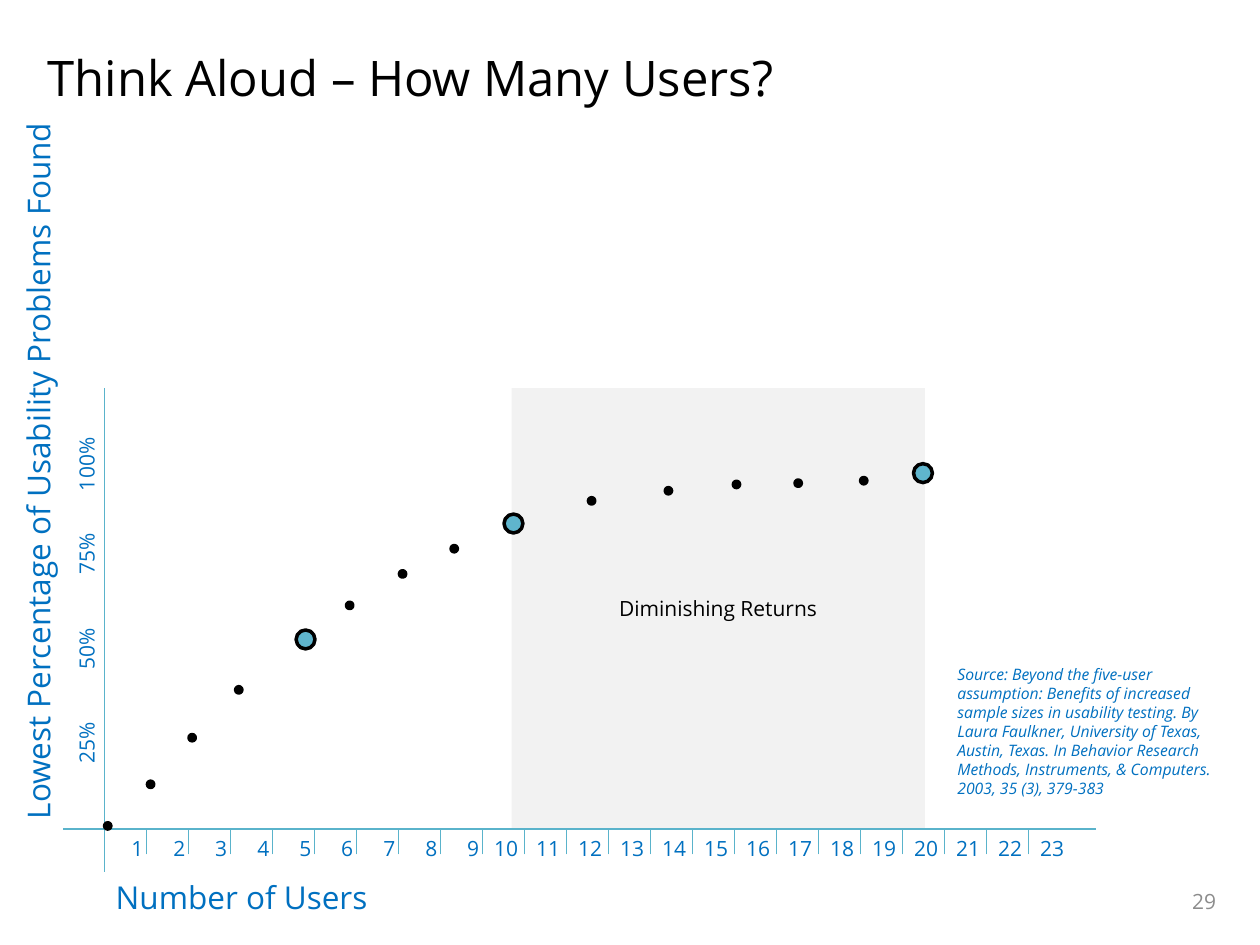
import pptx
import pptx.dml.color
import pptx.enum.shapes
import pptx.enum.text
import pptx.oxml.ns
import pptx.util
from lxml import etree

Inches, Pt = pptx.util.Inches, pptx.util.Pt
SHAPES = pptx.enum.shapes.MSO_SHAPE
ALIGN = pptx.enum.text.PP_ALIGN
ANCHOR = pptx.enum.text.MSO_ANCHOR

THEME = {
    "font": "Open Sans",
    "ink": "000000", "label": "0070C0", "axis": "5AB3CB", "marker": "5FB5CD",
    "region": "F2F2F2", "page_number": "8C8C8C",
    "title_size": 28, "axis_title_size": 18, "body_size": 12, "source_size": 9,
    "axis_width": 0.75, "marker_width": 2,
}

TITLE = "Think Aloud – How Many Users?"
PAGE_NUMBER = "29"
X_TITLE = "Number of Users"
Y_TITLE = "Lowest Percentage of Usability Problems Found"
REGION = "Diminishing Returns"
SOURCE = (
    "Source: Beyond the five-user assumption: Benefits of increased sample sizes "
    "in usability testing. By Laura Faulkner, University of Texas, Austin, Texas. "
    "In Behavior Research Methods, Instruments, & Computers. 2003, 35 (3), 379-383"
)
USER_COUNT = 23
PERCENT_TOPS = [("25%", 5.55), ("50%", 4.81), ("75%", 4.05), ("100%", 3.39)]

# Left and top of each point on the curve, in inches
DOTS = [
    (0.83, 6.53), (1.17, 6.2), (1.5, 5.83), (1.87, 5.45), (2.75, 4.78), (3.17, 4.53),
    (3.58, 4.33), (4.67, 3.95), (5.28, 3.87), (5.82, 3.82), (6.31, 3.81), (6.83, 3.79),
]
KEY_POINTS = [(2.35, 5), (4, 4.08), (7.25, 3.68)]
DOT_SIZE, KEY_POINT_SIZE = 0.05, 0.15

AXIS_LEFT, AXIS_TOP, AXIS_BASE = 0.83, 3.08, 6.58
TICK_STEP, TICK_LENGTH = 1 / 3, 0.2


def color(name):
    return pptx.dml.color.RGBColor.from_string(THEME[name])


def write(frame, text, size, ink, align=ALIGN.LEFT, italic=False):
    frame.word_wrap = True
    para = frame.paragraphs[0]
    para.text = text
    para.alignment = align
    para.font.name = THEME["font"]
    para.font.size = Pt(THEME[size])
    para.font.color.rgb = color(ink)
    para.font.italic = italic


def add_text(slide, place, text, size="body_size", ink="label", rotation=0, **style):
    box = slide.shapes.add_textbox(*map(Inches, place))
    box.rotation = rotation
    write(box.text_frame, text, size, ink, **style)
    return box


def add_line(slide, *ends):
    line = slide.shapes.add_connector(
        pptx.enum.shapes.MSO_CONNECTOR.STRAIGHT, *map(Inches, ends))
    line.line.color.rgb = color("axis")
    line.line.width = Pt(THEME["axis_width"])
    properties = line.element.find(pptx.oxml.ns.qn("p:spPr"))
    etree.SubElement(properties, pptx.oxml.ns.qn("a:effectLst"))


def add_filled(slide, kind, place, fill):
    shape = slide.shapes.add_shape(kind, *map(Inches, place))
    shape.shadow.inherit = False
    shape.fill.solid()
    shape.fill.fore_color.rgb = color(fill)
    return shape


def add_points(slide, points, size, fill):
    for left, top in points:
        point = add_filled(slide, SHAPES.OVAL, (left, top, size, size), fill)
        point.line.color.rgb = color("ink")
        point.line.width = Pt(THEME["marker_width"])


def add_region(slide):
    region = add_filled(slide, SHAPES.RECTANGLE, (4.06, AXIS_TOP, 3.28, 3.49), "region")
    region.line.fill.background()
    region.text_frame.vertical_anchor = ANCHOR.MIDDLE
    write(region.text_frame, REGION, "body_size", "ink", ALIGN.CENTER)


def add_axes(slide):
    add_line(slide, AXIS_LEFT, AXIS_TOP, AXIS_LEFT, 6.92)
    add_line(slide, 0.5, AXIS_BASE, 8.7, AXIS_BASE)
    add_text(slide, (0.82, 6.92, 5.18, 0.4), X_TITLE, "axis_title_size")
    add_text(slide, (-2.79, 3.31, 6.18, 0.4), Y_TITLE, "axis_title_size", rotation=270)
    for number in range(1, USER_COUNT + 1):
        tick = AXIS_LEFT + number * TICK_STEP
        if number < USER_COUNT:
            add_line(slide, tick, AXIS_BASE + TICK_LENGTH, tick, AXIS_BASE)
        offset, width = (0.22, 0.18) if number < 10 else (0.34, 0.61)
        label = add_text(slide, (tick - offset, AXIS_BASE, width, 0.3), str(number))
        label.text_frame.margin_right = 0
    for percent, top in PERCENT_TOPS:
        add_text(slide, (0.23, top, 0.91, 0.3), percent, rotation=270)


def main():
    deck = pptx.Presentation()
    deck.slide_width, deck.slide_height = Inches(10), Inches(7.5)
    slide = deck.slides.add_slide(deck.slide_layouts[6])
    add_text(slide, (0.28, 0.33, 9.47, 1.08), TITLE, "title_size", "ink")
    page_number = add_text(slide, (7.42, 6.95, 2.33, 0.4), PAGE_NUMBER,
                           ink="page_number", align=ALIGN.RIGHT)
    page_number.text_frame.vertical_anchor = ANCHOR.MIDDLE
    add_region(slide)
    add_axes(slide)
    add_points(slide, KEY_POINTS, KEY_POINT_SIZE, "marker")
    add_points(slide, DOTS, DOT_SIZE, "ink")
    add_text(slide, (7.5, 5.23, 2.35, 1.16), SOURCE, "source_size", italic=True)
    deck.save("out.pptx")


if __name__ == "__main__":
    main()
